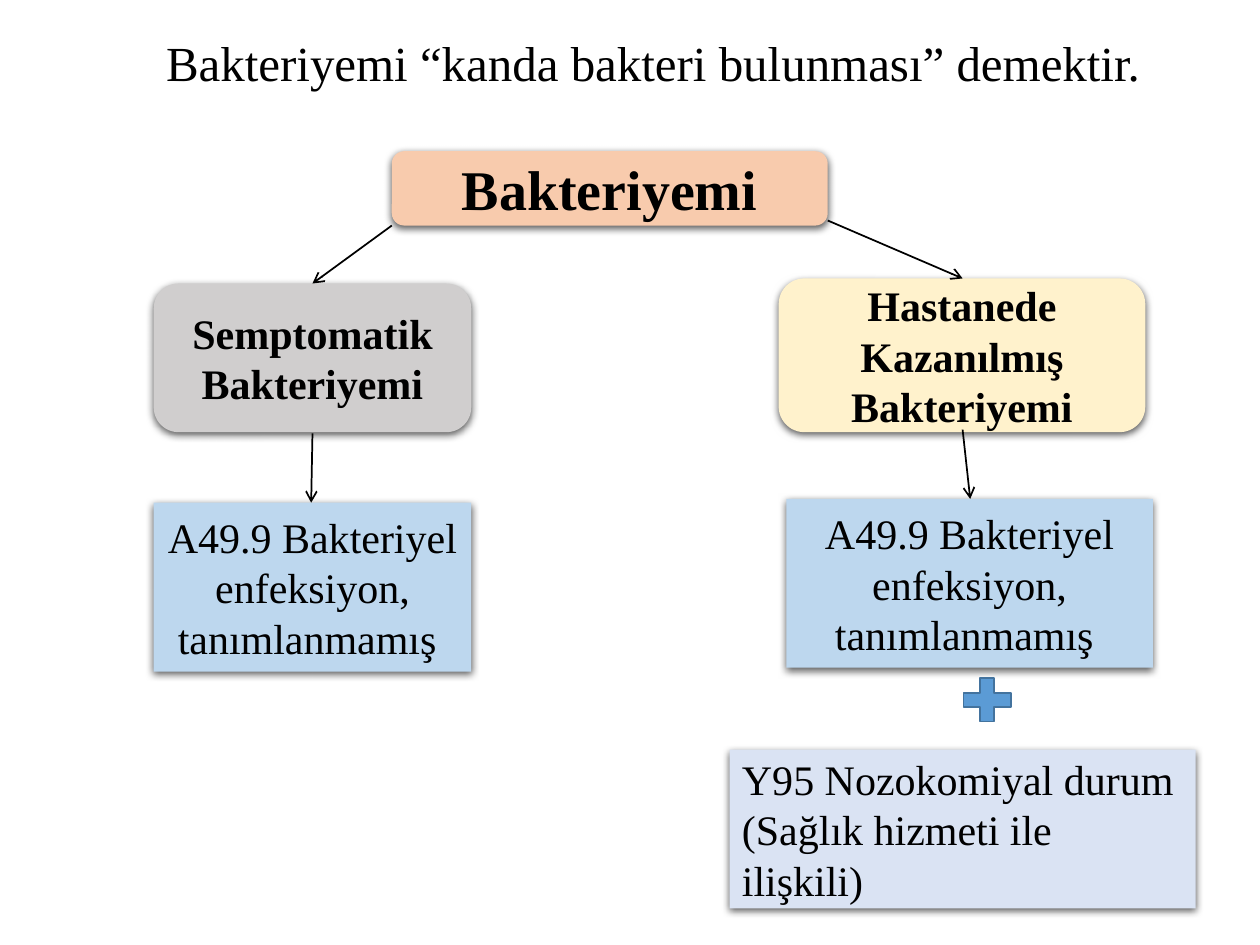
from typing import NamedTuple

from lxml import etree
from pptx import Presentation
from pptx import util as u
from pptx.dml.color import RGBColor
from pptx.enum import shapes, text
from pptx.oxml.ns import qn

BLACK = RGBColor(0x00, 0x00, 0x00)
PEACH = RGBColor(0xF8, 0xCB, 0xAD)
GREY = RGBColor(0xD0, 0xCE, 0xCE)
CREAM = RGBColor(0xFF, 0xF2, 0xCC)
SKY = RGBColor(0xBD, 0xD7, 0xEE)
LAVENDER = RGBColor(0xDA, 0xE3, 0xF3)
PLUS_BLUE = RGBColor(0x5B, 0x9B, 0xD5)
PLUS_EDGE = RGBColor(0x43, 0x73, 0x9E)

FONT = "Times New Roman"
COLUMNS, ROWS = 100, 75
CELL = u.Inches(0.1)
ROUND = shapes.MSO_SHAPE.ROUNDED_RECTANGLE
RECT = shapes.MSO_SHAPE.RECTANGLE
CENTER, LEFT = text.PP_ALIGN.CENTER, text.PP_ALIGN.LEFT


class Area(NamedTuple):
    """Left, top, width and height in grid columns and rows."""
    col: float
    row: float
    cols: float
    rows: float


class Node(NamedTuple):
    area: Area
    wording: str
    fill: RGBColor
    outline: shapes.MSO_SHAPE = RECT
    size: int = 24
    bold: bool = False
    align: text.PP_ALIGN = CENTER


class Arrow(NamedTuple):
    start: tuple[float, float]
    end: tuple[float, float]


def grid(*cells: float) -> list[int]:
    return [round(cell * CELL) for cell in cells]


def write(frame, wording: str, size: int, bold: bool, align: text.PP_ALIGN) -> None:
    frame.word_wrap = True
    frame.text = wording
    for paragraph in frame.paragraphs:
        paragraph.alignment = align
        for run in paragraph.runs:
            run.font.name, run.font.size = FONT, u.Pt(size)
            run.font.bold, run.font.color.rgb = bold, BLACK


def cast_shadow(shape) -> None:
    shape.shadow.inherit = False
    effects = shape.element.spPr.find(qn("a:effectLst"))
    shadow = etree.SubElement(
        effects, qn("a:outerShdw"), blurRad=str(u.Pt(4.5)), dist=str(u.Pt(1.5)),
        dir="5400000", algn="ctr", rotWithShape="0")
    color = etree.SubElement(shadow, qn("a:srgbClr"), val=str(BLACK))
    etree.SubElement(color, qn("a:alpha"), val="63000")


def draw_node(slide, node: Node) -> None:
    box = slide.shapes.add_shape(node.outline, *grid(*node.area))
    box.fill.solid()
    box.fill.fore_color.rgb = node.fill
    box.line.fill.background()
    cast_shadow(box)
    box.text_frame.vertical_anchor = text.MSO_ANCHOR.MIDDLE
    write(box.text_frame, node.wording, node.size, node.bold, node.align)


def draw_arrow(slide, arrow: Arrow) -> None:
    link = slide.shapes.add_connector(
        shapes.MSO_CONNECTOR.STRAIGHT, *grid(*arrow.start, *arrow.end))
    link.line.color.rgb, link.line.width = BLACK, u.Pt(1)
    etree.SubElement(link.line._get_or_add_ln(), qn("a:tailEnd"), type="arrow")
    etree.SubElement(link.element.spPr, qn("a:effectLst"))


def draw_plus(slide, area: Area) -> None:
    plus = slide.shapes.add_shape(shapes.MSO_SHAPE.MATH_PLUS, *grid(*area))
    plus.shadow.inherit = False
    plus.fill.solid()
    plus.fill.fore_color.rgb = PLUS_BLUE
    plus.line.color.rgb, plus.line.width = PLUS_EDGE, u.Pt(1)


def draw_title(slide, area: Area, wording: str) -> None:
    title = slide.shapes.add_textbox(*grid(*area))
    write(title.text_frame, wording, 28, False, LEFT)


UNSPECIFIED = "A49.9 Bakteriyel enfeksiyon, tanımlanmamış "

NODES = [
    # Root and its two branches
    Node(Area(31.1, 12, 34.6, 5.9), "Bakteriyemi", PEACH, ROUND, 32, True),
    Node(Area(12.2, 22.5, 25.2, 11.8), "Semptomatik Bakteriyemi", GREY, ROUND, bold=True),
    Node(Area(61.8, 22.1, 29.1, 12.2), "Hastanede Kazanılmış Bakteriyemi",
         CREAM, ROUND, bold=True),
    # Diagnosis codes
    Node(Area(12.2, 39.9, 25.2, 13.4), UNSPECIFIED, SKY),
    Node(Area(57.9, 59.5, 37, 12.6),
         "Y95 Nozokomiyal durum\n(Sağlık hizmeti ile ilişkili)", LAVENDER, align=LEFT),
    Node(Area(62.4, 39.6, 29.1, 13.4), UNSPECIFIED, SKY),
]

ARROWS = [
    Arrow((31.1, 17.9), (24.8, 22.5)),
    Arrow((65.7, 17.5), (76.4, 22.1)),
    Arrow((24.8, 34.4), (24.7, 39.9)),
    Arrow((76.4, 34.1), (77, 39.6)),
]


def main() -> None:
    deck = Presentation()
    deck.slide_width, deck.slide_height = grid(COLUMNS, ROWS)
    slide = deck.slides.add_slide(deck.slide_layouts[6])

    for node in NODES:
        draw_node(slide, node)
    for arrow in ARROWS:
        draw_arrow(slide, arrow)
    draw_plus(slide, Area(75.8, 53.2, 5.1, 4.7))
    draw_title(slide, Area(12.2, 2.1, 86.6, 5.7),
               "Bakteriyemi “kanda bakteri bulunması” demektir.")

    deck.save("out.pptx")


if __name__ == "__main__":
    main()
